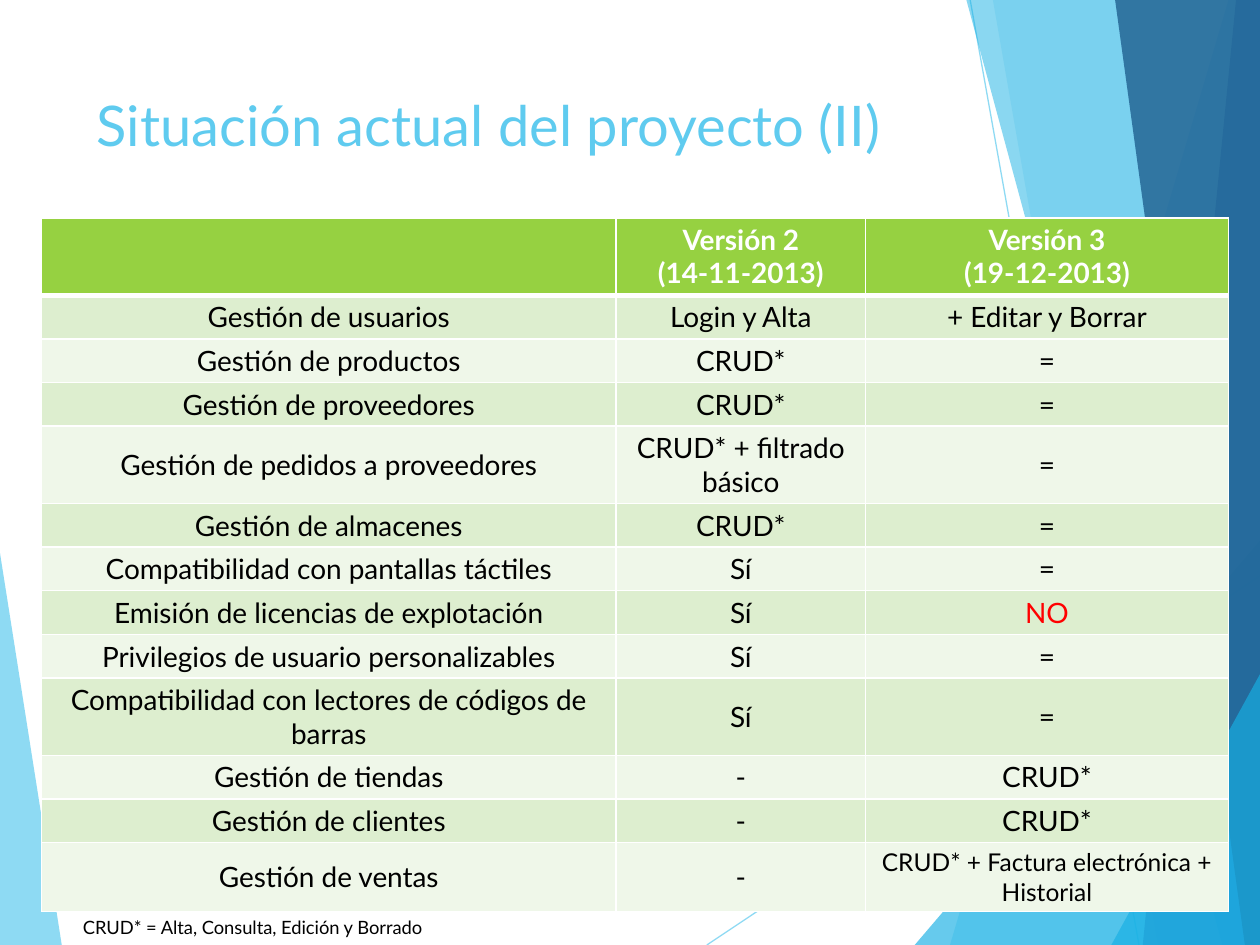
import dataclasses

import pptx
import pptx.dml.color
import pptx.enum.shapes
import pptx.enum.text
import pptx.oxml
import pptx.oxml.ns
import pptx.util


@dataclasses.dataclass(frozen=True)
class Theme:
    font: str = "Lato"
    sky: str = "5FCBEF"
    cyan: str = "17B0E4"
    blue: str = "2E83C3"
    navy: str = "226292"
    white: str = "FFFFFF"
    black: str = "000000"
    red: str = "FF0000"
    header: str = "96D141"
    bands: tuple = ("DDEECF", "EFF7E9")
    title_size: float = 32
    table_size: float = 16
    small_size: float = 14
    note_size: float = 10.5


THEME = Theme()
COLUMNS, ROWS = 100, 75

# Colour, opacity in percent, and corners in grid columns and rows
FACETS = [
    (THEME.sky, 36, [(97.5, 0), (75.4, 75), (100, 75), (100, 0)]),
    (THEME.sky, 20, [(78.8, 0), (91.9, 75), (100, 75), (100, 0)]),
    (THEME.cyan, 66, [(72.6, 75), (100, 42.9), (100, 75)]),
    (THEME.cyan, 50, [(76.7, 0), (97, 75), (100, 75), (100, 0)]),
    (THEME.blue, 70, [(98.1, 0), (90.7, 75), (100, 75), (100, 0)]),
    (THEME.navy, 82, [(88.5, 0), (98.8, 75), (100, 75), (100, 0)]),
    (THEME.cyan, 66, [(88.2, 75), (100, 53.5), (100, 75)]),
]

VERSIONS = [
    ("", "Versión 2\n(14-11-2013)", "Versión 3\n(19-12-2013)"),
    ("Gestión de usuarios", "Login y Alta", "+ Editar y Borrar"),
    ("Gestión de productos", "CRUD*", "="),
    ("Gestión de proveedores", "CRUD*", "="),
    ("Gestión de pedidos a proveedores", "CRUD* + filtrado básico", "="),
    ("Gestión de almacenes", "CRUD*", "="),
    ("Compatibilidad con pantallas táctiles", "Sí", "="),
    ("Emisión de licencias de explotación", "Sí", "NO"),
    ("Privilegios de usuario personalizables", "Sí", "="),
    ("Compatibilidad con lectores de códigos de barras", "Sí", "="),
    ("Gestión de tiendas", "-", "CRUD*"),
    ("Gestión de clientes", "-", "CRUD*"),
    ("Gestión de ventas", "-", "CRUD* + Factura electrónica + Historial"),
]


def rgb(color):
    return pptx.dml.color.RGBColor.from_string(color)


def set_opacity(fill_parent, percent):
    color = fill_parent.find(".//" + pptx.oxml.ns.qn("a:srgbClr"))
    color.append(pptx.oxml.parse_xml(
        f'<a:alpha {pptx.oxml.ns.nsdecls("a")} val="{percent * 1000}"/>'))


class SlideBuilder:
    def __init__(self, presentation, theme):
        self.theme = theme
        self.slide = presentation.slides.add_slide(presentation.slide_layouts[6])
        self.column = presentation.slide_width / COLUMNS
        self.row = presentation.slide_height / ROWS

    def x(self, columns):
        return round(columns * self.column)

    def y(self, rows):
        return round(rows * self.row)

    def box(self, left, top, width, height):
        return self.x(left), self.y(top), self.x(width), self.y(height)

    def facet(self, color, opacity, corners):
        points = [(self.x(column), self.y(row)) for column, row in corners]
        builder = self.slide.shapes.build_freeform(*points[0])
        builder.add_line_segments(points[1:], close=True)
        shape = builder.convert_to_shape()
        shape.shadow.inherit = False
        shape.fill.solid()
        shape.fill.fore_color.rgb = rgb(color)
        set_opacity(shape.element.spPr, opacity)
        shape.line.fill.background()

    def line(self, start, end):
        connector = self.slide.shapes.add_connector(
            pptx.enum.shapes.MSO_CONNECTOR.STRAIGHT,
            self.x(start[0]), self.y(start[1]), self.x(end[0]), self.y(end[1]))
        connector.line.width = pptx.util.Pt(0.75)
        connector.line.color.rgb = rgb(self.theme.sky)
        properties = connector.element.spPr
        set_opacity(properties, 70)
        properties.append(pptx.oxml.parse_xml(
            f'<a:effectLst {pptx.oxml.ns.nsdecls("a")}/>'))

    def format_text(self, text_frame, size, color, bold=False, alignment=None):
        for paragraph in text_frame.paragraphs:
            paragraph.alignment = alignment
            for run in paragraph.runs:
                run.font.name = self.theme.font
                run.font.size = pptx.util.Pt(size)
                run.font.bold = bold
                run.font.color.rgb = rgb(color)

    def text(self, text, place, size, color):
        text_frame = self.slide.shapes.add_textbox(*self.box(*place)).text_frame
        text_frame.word_wrap = True
        text_frame.text = text
        self.format_text(text_frame, size, color)

    def border(self, cell, bottom_width):
        properties = cell._tc.get_or_add_tcPr()
        for side, width in (("L", 1), ("R", 1), ("T", 1), ("B", bottom_width)):
            properties.append(pptx.oxml.parse_xml(
                f'<a:ln{side} {pptx.oxml.ns.nsdecls("a")} w="{pptx.util.Pt(width)}">'
                f'<a:solidFill><a:srgbClr val="{self.theme.white}"/></a:solidFill>'
                f'</a:ln{side}>'))

    def cell(self, cell, text, is_header, fill):
        theme = self.theme
        cell.margin_left = cell.margin_right = self.x(0.7)
        cell.margin_top = cell.margin_bottom = self.y(0.4)
        self.border(cell, 3 if is_header else 1)
        cell.fill.solid()
        cell.fill.fore_color.rgb = rgb(fill)
        anchors = pptx.enum.text.MSO_ANCHOR
        cell.vertical_anchor = anchors.TOP if is_header else anchors.MIDDLE
        cell.text_frame.text = text
        color = theme.white if is_header else theme.red if text == "NO" else theme.black
        size = theme.small_size if "Factura" in text else theme.table_size
        self.format_text(cell.text_frame, size, color, is_header,
                         pptx.enum.text.PP_ALIGN.CENTER)

    def table(self, records, left, top, widths, header_height, row_height):
        height = header_height + row_height * (len(records) - 1)
        table = self.slide.shapes.add_table(
            len(records), len(widths),
            *self.box(left, top, sum(widths), height)).table
        for column, width in zip(table.columns, widths):
            column.width = self.x(width)
        for index, record in enumerate(records):
            is_header = index == 0
            table.rows[index].height = self.y(header_height if is_header else row_height)
            fill = self.theme.header if is_header else self.theme.bands[(index - 1) % 2]
            for cell, text in zip(table.rows[index].cells, record):
                self.cell(cell, text, is_header, fill)


def main():
    presentation = pptx.Presentation()
    presentation.slide_width = pptx.util.Inches(10)
    presentation.slide_height = pptx.util.Inches(7.5)
    builder = SlideBuilder(presentation, THEME)

    builder.facet(THEME.sky, 70, [(0, 43.9), (4.9, 75), (0, 75)])
    builder.line((56.1, 75), (100, 45.7))
    builder.line((77, 0), (90.4, 75))
    for facet in FACETS:
        builder.facet(*facet)

    builder.text("Situación actual del proyecto (II)", (6.7, 6.7, 69.4, 14.4),
                 THEME.title_size, THEME.sky)
    builder.table(VERSIONS, left=3.3, top=17.3, widths=(45.6, 19.8, 28.8),
                  header_height=5.3, row_height=3)
    builder.text("CRUD* = Alta, Consulta, Edición y Borrado", (5.6, 72.2, 35.8, 2.8),
                 THEME.note_size, THEME.black)
    presentation.save("out.pptx")


if __name__ == "__main__":
    main()
